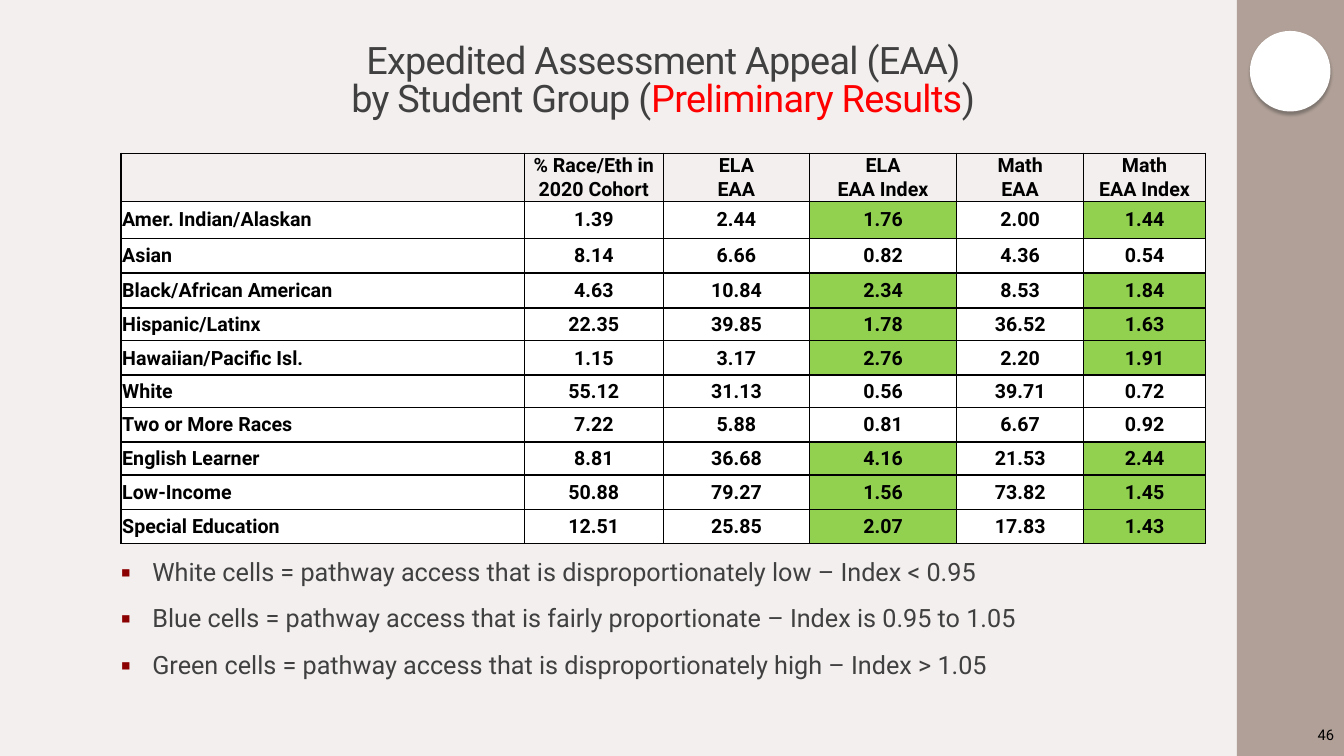
import lxml.etree
import pptx
import pptx.dml.color
import pptx.enum.shapes
import pptx.enum.text
import pptx.oxml
import pptx.util

Cm = pptx.util.Cm
Pt = pptx.util.Pt
ALIGN = pptx.enum.text.PP_ALIGN
MIDDLE = pptx.enum.text.MSO_ANCHOR.MIDDLE
SHAPES = pptx.enum.shapes.MSO_SHAPE
DRAWING_NS = 'xmlns:a="http://schemas.openxmlformats.org/drawingml/2006/main"'


def color(hex_code):
    return pptx.dml.color.RGBColor.from_string(hex_code)


def write(paragraph, text, size=14, ink="000000", bold=False, align=None, tracking=None):
    run = paragraph.add_run()
    run.text = text
    run.font.name = "Roboto"
    run.font.size = Pt(size)
    run.font.bold = bold
    run.font.color.rgb = color(ink)
    if align is not None:
        paragraph.alignment = align
    if tracking is not None:
        run.font._element.set("spc", str(tracking))


deck = pptx.Presentation()
deck.slide_width, deck.slide_height = Cm(33.87), Cm(19.05)
slide = deck.slides.add_slide(deck.slide_layouts[5])
slide.background.fill.solid()
slide.background.fill.fore_color.rgb = color("F2EFEE")

# Side band and round emblem
band = slide.shapes.add_shape(SHAPES.RECTANGLE, Cm(31.17), 0, Cm(2.7), Cm(19.05))
emblem = slide.shapes.add_shape(SHAPES.OVAL, Cm(31.5), Cm(0.78), Cm(2.03), Cm(2.03))
for shape, fill in ((band, "B0A097"), (emblem, "FFFFFF")):
    shape.shadow.inherit = False
    shape.fill.solid()
    shape.fill.fore_color.rgb = color(fill)
    shape.line.fill.background()
effects = emblem._element.spPr.find(pptx.oxml.ns.qn("a:effectLst"))
effects.append(pptx.oxml.parse_xml(
    f'<a:outerShdw {DRAWING_NS} blurRad="25400" dist="25400" dir="5400000" rotWithShape="0">'
    '<a:srgbClr val="373737"><a:alpha val="40000"/></a:srgbClr></a:outerShdw>'))

# Title
title = slide.shapes.title
title.left, title.top, title.width, title.height = Cm(3.05), Cm(0.79), Cm(27.33), Cm(2.54)
title.text_frame.auto_size = pptx.enum.text.MSO_AUTO_SIZE.NONE
title.text_frame.vertical_anchor = MIDDLE
heading = title.text_frame.paragraphs[0]
heading.line_spacing = 0.85
heading_format = dict(size=27, align=ALIGN.CENTER, tracking=-50)
write(heading, "Expedited Assessment Appeal (EAA)", ink="404040", **heading_format)
heading.add_line_break()
write(heading, "by Student Group (", ink="404040", **heading_format)
write(heading, "Preliminary Results", ink="FF0000", **heading_format)
write(heading, ")", ink="404040", **heading_format)

# Results by student group
headers = ["", "% Race/Eth in 2020 Cohort", "ELA\nEAA", "ELA\nEAA Index",
           "Math\nEAA", "Math\nEAA Index"]
results = [
    ("Amer. Indian/Alaskan", 1.39, 2.44, 1.76, 2.00, 1.44),
    ("Asian", 8.14, 6.66, 0.82, 4.36, 0.54),
    ("Black/African American", 4.63, 10.84, 2.34, 8.53, 1.84),
    ("Hispanic/Latinx", 22.35, 39.85, 1.78, 36.52, 1.63),
    ("Hawaiian/Pacific Isl.", 1.15, 3.17, 2.76, 2.20, 1.91),
    ("White", 55.12, 31.13, 0.56, 39.71, 0.72),
    ("Two or More Races", 7.22, 5.88, 0.81, 6.67, 0.92),
    ("English Learner", 8.81, 36.68, 4.16, 21.53, 2.44),
    ("Low-Income", 50.88, 79.27, 1.56, 73.82, 1.45),
    ("Special Education", 12.51, 25.85, 2.07, 17.83, 1.43),
]
column_widths = [10.16, 3.51, 3.68, 3.71, 3.2, 3.07]
row_heights = [1.21, 0.93, 0.88, 0.88, 0.83, 0.86, 0.81, 0.88, 0.83, 0.86, 0.86]
index_columns = (3, 5)

table = slide.shapes.add_table(len(row_heights), len(column_widths), Cm(3.05), Cm(3.86),
                               Cm(sum(column_widths)), Cm(sum(row_heights))).table
table.first_row = table.horz_banding = False
for column, width in zip(table.columns, column_widths):
    column.width = Cm(width)
for row, height in zip(table.rows, row_heights):
    row.height = Cm(height)

for r, record in enumerate([headers] + results):
    for c, value in enumerate(record):
        cell = table.cell(r, c)
        cell.vertical_anchor = MIDDLE
        cell.margin_left = cell.margin_right = cell.margin_top = Cm(0.03)
        cell.margin_bottom = 0

        # Borders come before the fill in the cell properties
        for side in ("lnL", "lnR", "lnT", "lnB"):
            cell._tc.get_or_add_tcPr().append(pptx.oxml.parse_xml(
                f'<a:{side} {DRAWING_NS} w="12700"><a:solidFill>'
                f'<a:srgbClr val="000000"/></a:solidFill></a:{side}>'))
        if r == 0:
            cell.fill.background()
        else:
            high = c in index_columns and value > 1.05
            cell.fill.solid()
            cell.fill.fore_color.rgb = color("92D050" if high else "FFFFFF")

        text = value if isinstance(value, str) else f"{value:.2f}"
        for i, line in enumerate(text.split("\n") if text else []):
            paragraph = cell.text_frame.paragraphs[0] if i == 0 else cell.text_frame.add_paragraph()
            write(paragraph, line, bold=True, align=ALIGN.CENTER if c else ALIGN.LEFT)

# Key to the cell colours
key = slide.shapes.add_textbox(Cm(3.05), Cm(13.97), Cm(27.08), Cm(3.58)).text_frame
key.word_wrap = True
key.margin_left = key.margin_right = 0
for i, meaning in enumerate([
    "White cells = pathway access that is disproportionately low – Index < 0.95",
    "Blue cells = pathway access that is fairly proportionate – Index is 0.95 to 1.05",
    "Green cells = pathway access that is disproportionately high – Index > 1.05",
]):
    paragraph = key.paragraphs[0] if i == 0 else key.add_paragraph()
    properties = paragraph._p.get_or_add_pPr()
    properties.set("marL", str(Cm(0.79)))
    properties.set("indent", str(-Cm(0.79)))
    for bullet in ('<a:buClr {}><a:srgbClr val="8B0000"/></a:buClr>',
                   '<a:buFont {} typeface="Roboto"/>',
                   '<a:buChar {} char="▪"/>'):
        properties.append(lxml.etree.fromstring(bullet.format(DRAWING_NS)))
    paragraph.line_spacing = 0.9
    paragraph.space_before = Pt(12 if i else 0)
    paragraph.space_after = Pt(2)
    write(paragraph, meaning, size=18, ink="404040")

# Page number
page = slide.shapes.add_textbox(Cm(31.17), Cm(18.01), Cm(2.7), Cm(1.02)).text_frame
page.word_wrap = True
page.vertical_anchor = MIDDLE
write(page.paragraphs[0], "46", size=10.5, align=ALIGN.RIGHT)

deck.save("out.pptx")
